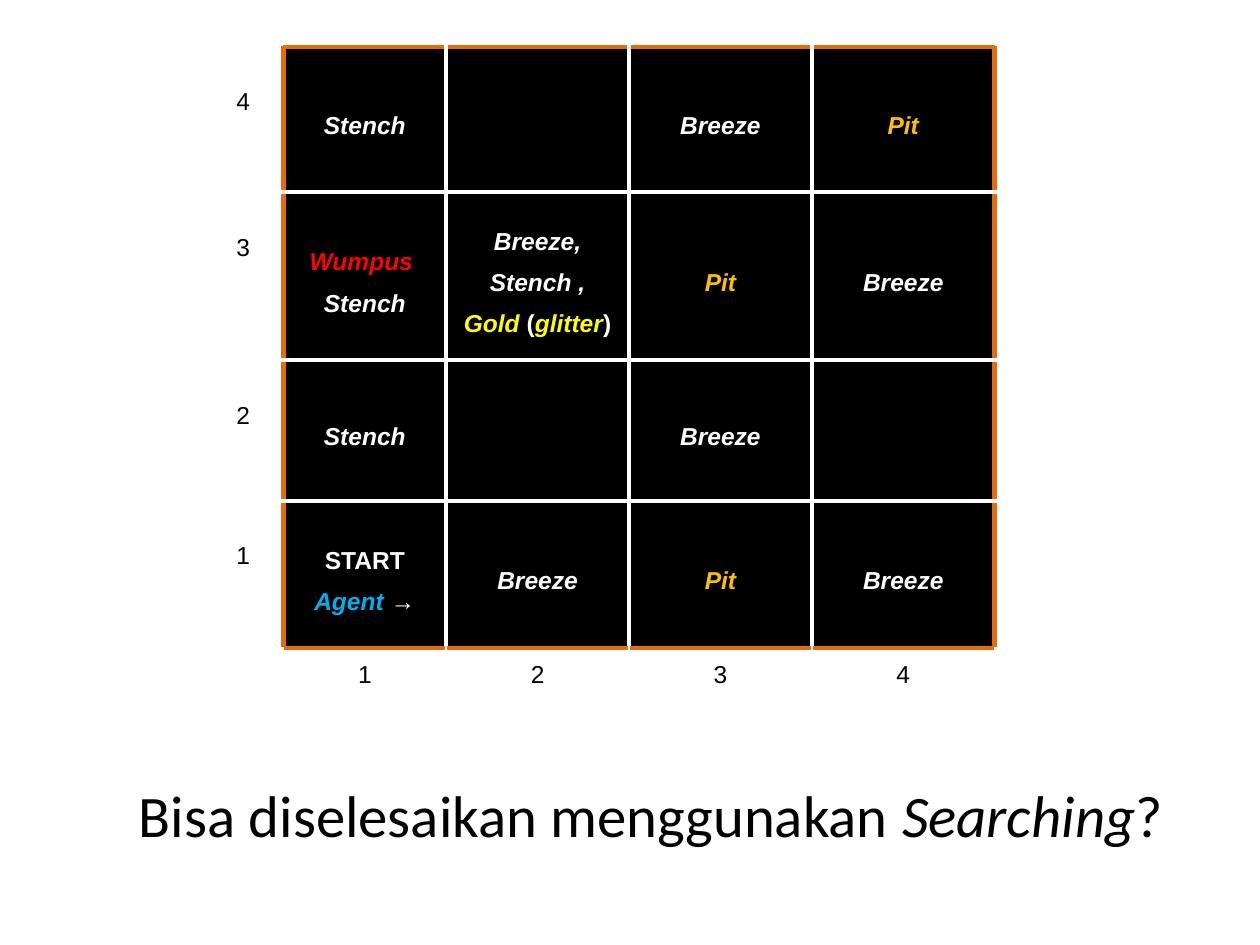
from lxml import etree
from pptx import Presentation
from pptx.dml.color import RGBColor
from pptx.enum.text import MSO_ANCHOR, MSO_AUTO_SIZE, PP_ALIGN
from pptx.oxml.ns import qn
from pptx.util import Pt

CENTER, MIDDLE, TOP = PP_ALIGN.CENTER, MSO_ANCHOR.MIDDLE, MSO_ANCHOR.TOP
COLORS = {"black": "000000", "white": "FFFFFF", "frame": "E46C0A", "pit": "FFC000",
          "wumpus": "FF0000", "gold": "FFFF00", "agent": "00B0F0"}
COL_WIDTHS = [46, 93, 104.5, 104.5, 104.5, 21.5]
ROW_HEIGHTS = [15.3, 83, 96, 80.5, 84, 32]
N = 4  # caves per side

# Each cell is a list of paragraphs, each paragraph a list of (text, colour, italic)
STENCH = [[("Stench", "white", True)]]
BREEZE = [[("Breeze", "white", True)]]
PIT = [[("Pit", "pit", True)]]
WUMPUS = [[("Wumpus ", "wumpus", True)]] + STENCH
GOLD = [[("Breeze,", "white", True)], [("Stench ,", "white", True)],
        [("Gold ", "gold", True), ("(", "white", False),
         ("glitter", "gold", True), (")", "white", False)]]
START = [[("START", "white", False)],
         [("Agent", "agent", True), (" →", "white", True)]]
CAVES = [[STENCH, [], BREEZE, PIT],
         [WUMPUS, GOLD, PIT, BREEZE],
         [STENCH, [], BREEZE, []],
         [START, BREEZE, PIT, BREEZE]]


def add_border(cell, side, color):
    ln = etree.SubElement(cell._tc.get_or_add_tcPr(), qn(f"a:ln{side}"), w=str(Pt(3)))
    fill = etree.SubElement(ln, qn("a:solidFill"))
    etree.SubElement(fill, qn("a:srgbClr"), val=COLORS[color])


def write_cell(cell, paragraphs, bold):
    tf = cell.text_frame
    if not paragraphs:
        # A small end mark keeps empty cells from stretching their row
        tf.paragraphs[0]._p.get_or_add_endParaRPr().set("sz", "800")
    for i, runs in enumerate(paragraphs):
        p = tf.add_paragraph() if i else tf.paragraphs[0]
        p.alignment = CENTER
        p.line_spacing = 1.5
        for text, color, italic in runs:
            r = p.add_run()
            r.text = text
            r.font.name = "Arial"
            r.font.size = Pt(14)
            r.font.bold = bold
            r.font.italic = italic
            r.font.color.rgb = RGBColor.from_string(COLORS[color])


prs = Presentation()
prs.slide_width, prs.slide_height = Pt(720), Pt(540)
slide = prs.slides.add_slide(prs.slide_layouts[1])
title = slide.shapes.title
title._element.getparent().remove(title._element)

# Question
body = slide.placeholders[1]
body.left, body.top, body.width, body.height = Pt(48), Pt(441.5), Pt(648), Pt(61)
tf = body.text_frame
tf.auto_size = MSO_AUTO_SIZE.NONE
tf.vertical_anchor = TOP
p = tf.paragraphs[0]
p.alignment = CENTER
p.space_before = Pt(2)
pPr = p._p.get_or_add_pPr()
pPr.set("marL", "0")
pPr.set("indent", "0")
etree.SubElement(pPr, qn("a:buNone"))
for text, italic in [("Bisa diselesaikan menggunakan ", False), ("Searching", True), ("?", False)]:
    r = p.add_run()
    r.text = text
    r.font.name = "Calibri"
    r.font.size = Pt(33.6)
    r.font.italic = italic
    r.font.color.rgb = RGBColor.from_string(COLORS["black"])

# Cave grid with a ring of label cells around it
table = slide.shapes.add_table(N + 2, N + 2, Pt(116), Pt(11.5),
                               Pt(sum(COL_WIDTHS)), Pt(sum(ROW_HEIGHTS))).table
table.first_row = table.horz_banding = False
for column, width in zip(table.columns, COL_WIDTHS):
    column.width = Pt(width)
for row, height in zip(table.rows, ROW_HEIGHTS):
    row.height = Pt(height)

for y in range(N + 2):
    for x in range(N + 2):
        cell = table.cell(y, x)
        in_row, in_col = 1 <= y <= N, 1 <= x <= N
        is_cave = in_row and in_col
        cell.margin_left = cell.margin_right = Pt(5)
        cell.margin_top = cell.margin_bottom = 0
        cell.vertical_anchor = MIDDLE if is_cave else TOP

        for side, dx, dy in [("L", -1, 0), ("R", 1, 0), ("T", 0, -1), ("B", 0, 1)]:
            next_is_cave = 1 <= x + dx <= N and 1 <= y + dy <= N
            if is_cave or next_is_cave:
                add_border(cell, side, "white" if is_cave and next_is_cave else "frame")

        if is_cave:
            cell.fill.solid()
            cell.fill.fore_color.rgb = RGBColor.from_string(COLORS["black"])
            write_cell(cell, CAVES[y - 1][x - 1], True)
            continue
        cell.fill.background()
        label = ""
        if x == 0 and in_row:
            label = str(N + 1 - y)
            cell.margin_top = Pt(16)
        elif y == N + 1 and in_col:
            label = str(x)
        write_cell(cell, [[(label, "black", False)]] if label else [], False)

prs.save("out.pptx")
